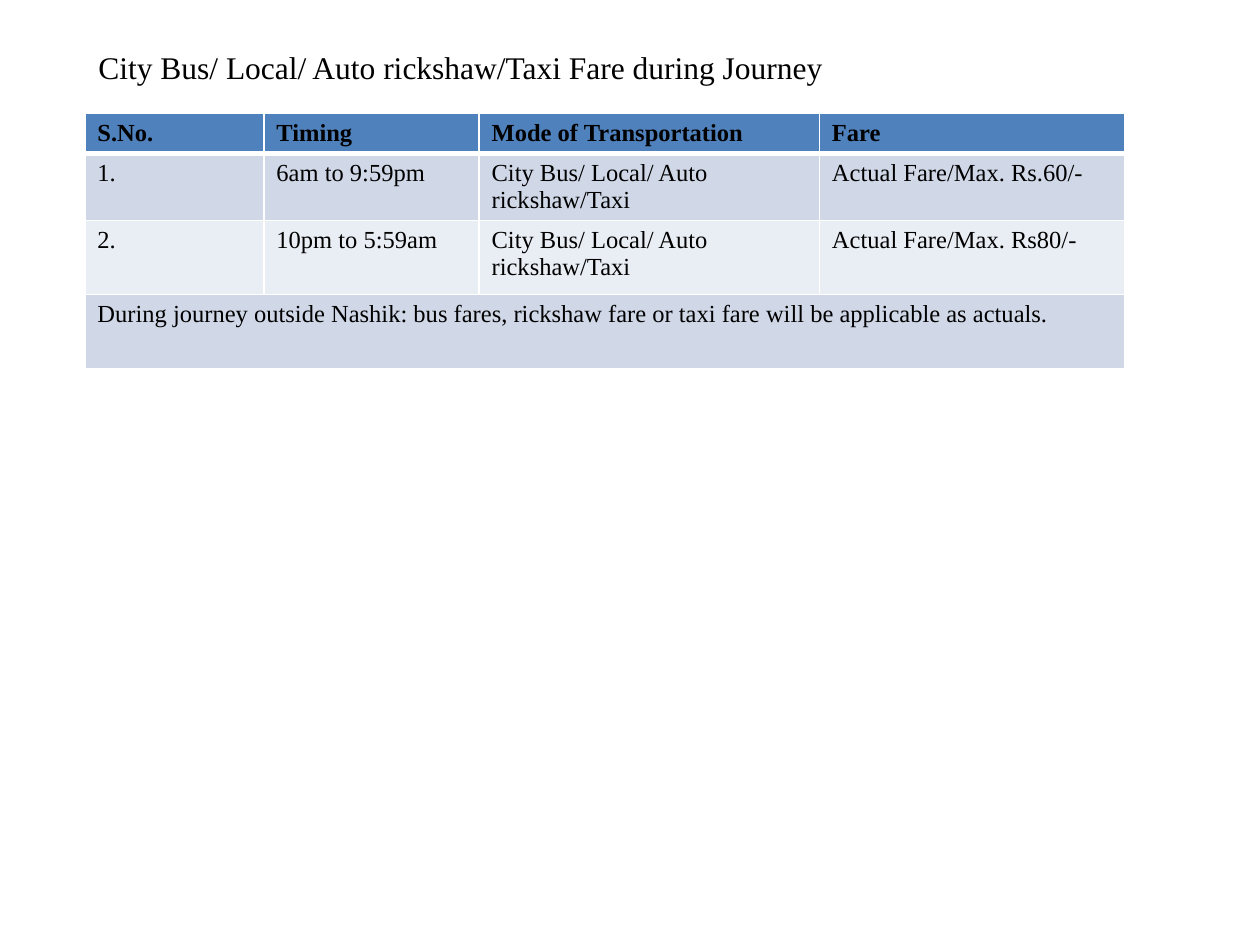
"""Build the slide listing local travel fares by time of day."""
from lxml import etree
from pptx import Presentation
from pptx.dml.color import RGBColor
from pptx.enum.text import MSO_ANCHOR, MSO_AUTO_SIZE, PP_ALIGN
from pptx.oxml.ns import qn
from pptx.util import Pt

LEFT = PP_ALIGN.LEFT
TOP = MSO_ANCHOR.TOP
NO_AUTOFIT = MSO_AUTO_SIZE.NONE

FONT = "Times New Roman"
BLACK, WHITE = "000000", "FFFFFF"
HEADER_FILL = "4F81BD"
BAND_FILLS = ["D0D8E8", "E9EDF4"]
COLUMN_WIDTHS = [102.25, 123, 194.5, 174.25]
ROW_HEIGHTS = [22.3, 38.2, 42.5, 42.5]

TITLE = "City Bus/ Local/ Auto rickshaw/Taxi Fare during Journey"
MODES = "City Bus/ Local/ Auto rickshaw/Taxi"
FARES = [
    ["S.No.", "Timing", "Mode of Transportation", "Fare"],
    ["1.", "6am to 9:59pm", MODES, "Actual Fare/Max. Rs.60/-"],
    ["2.", "10pm to 5:59am", MODES, "Actual Fare/Max. Rs80/-"],
    ["During journey outside Nashik: bus fares, rickshaw fare or taxi fare "
     "will be applicable as actuals."],
]


def colour(hex_code):
    """Return the colour for a hex string."""
    return RGBColor.from_string(hex_code)


def add_run(frame, text, size, bold=False):
    """Add one formatted run to the first paragraph of a text frame."""
    paragraph = frame.paragraphs[0]
    paragraph.alignment = LEFT
    run = paragraph.add_run()
    run.text = text
    run.font.name = FONT
    run.font.size = Pt(size)
    run.font.bold = bold
    run.font.color.rgb = colour(BLACK)


def add_border(cell, side, width):
    """Draw a white border along one side of a cell."""
    properties = cell._tc.get_or_add_tcPr()
    border = etree.SubElement(properties, qn(f"a:ln{side}"), w=str(Pt(width)))
    fill = etree.SubElement(border, qn("a:solidFill"))
    etree.SubElement(fill, qn("a:srgbClr"), val=WHITE)


def style_cell(cell, row_index):
    """Give a cell its borders and the fill of its row."""
    is_header = row_index == 0
    for side in "LRTB":
        below_header = (is_header and side == "B") or (row_index == 1 and side == "T")
        add_border(cell, side, 3 if below_header else 1)
    cell.fill.solid()
    fill = HEADER_FILL if is_header else BAND_FILLS[(row_index - 1) % 2]
    cell.fill.fore_color.rgb = colour(fill)


def add_title(slide):
    """Place and fill the title placeholder."""
    title = slide.shapes.title
    title.left, title.top, title.width, title.height = Pt(49), Pt(24), Pt(576), Pt(29)
    frame = title.text_frame
    frame.auto_size = NO_AUTOFIT
    frame.vertical_anchor = TOP
    add_run(frame, TITLE, 18)


def add_fare_table(slide):
    """Add the fare table with its closing note across all columns."""
    table = slide.shapes.add_table(
        len(FARES), len(COLUMN_WIDTHS), Pt(48.5), Pt(65),
        Pt(sum(COLUMN_WIDTHS)), Pt(sum(ROW_HEIGHTS))).table
    for column, width in zip(table.columns, COLUMN_WIDTHS):
        column.width = Pt(width)
    for row_index, (row, height) in enumerate(zip(table.rows, ROW_HEIGHTS)):
        row.height = Pt(height)
        for cell in row.cells:
            style_cell(cell, row_index)
        for cell, text in zip(row.cells, FARES[row_index]):
            add_run(cell.text_frame, text, 14, bold=row_index == 0)
    note_row = len(FARES) - 1
    table.cell(note_row, 0).merge(table.cell(note_row, len(COLUMN_WIDTHS) - 1))


def main():
    """Build and save the presentation."""
    presentation = Presentation()
    presentation.slide_width, presentation.slide_height = Pt(720), Pt(540)
    slide = presentation.slides.add_slide(presentation.slide_layouts[5])
    add_fare_table(slide)
    add_title(slide)
    presentation.save("out.pptx")


if __name__ == "__main__":
    main()
